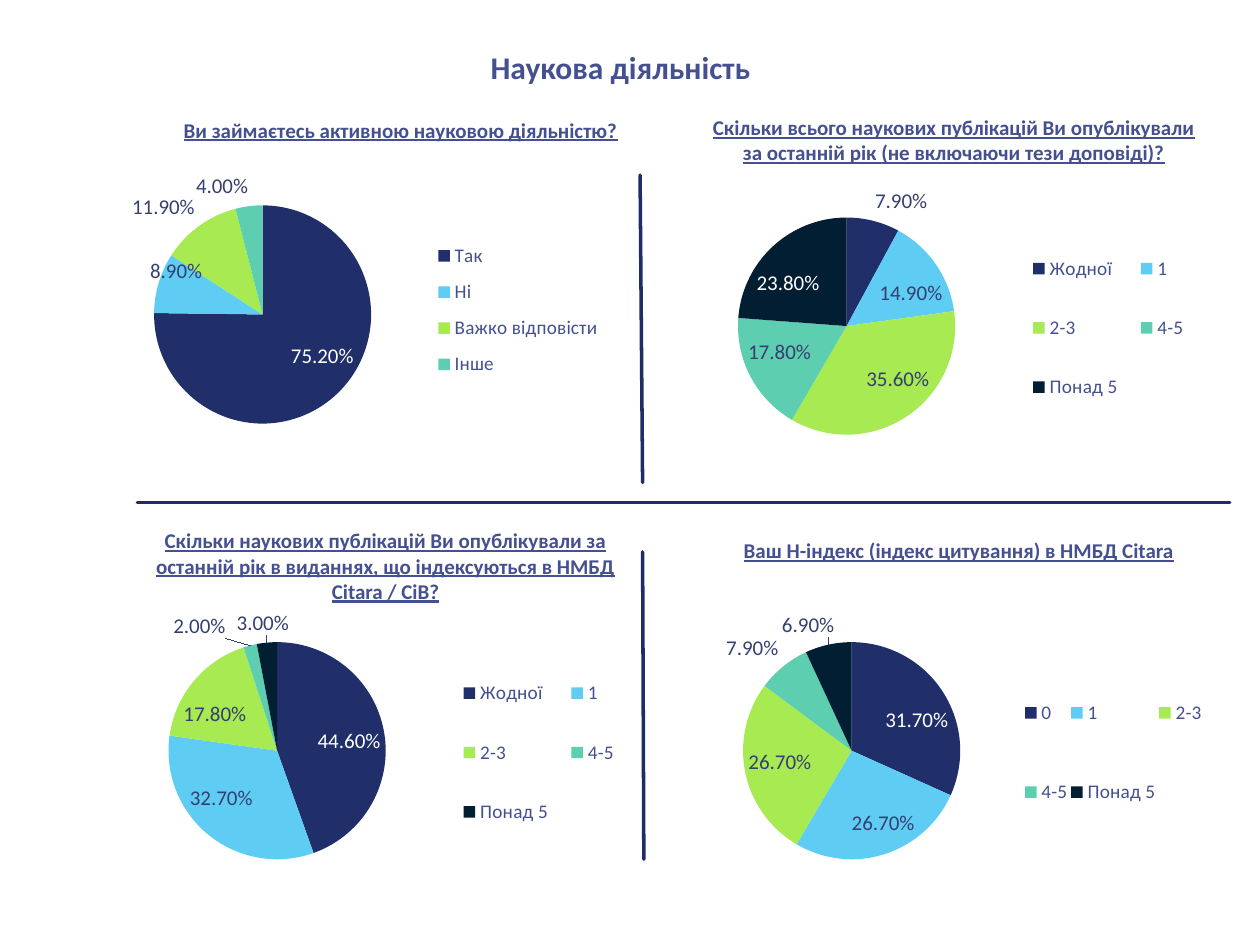
from lxml.etree import SubElement
from pptx import Presentation
from pptx.chart.data import CategoryChartData
from pptx.dml.color import RGBColor
from pptx.enum.chart import XL_CHART_TYPE as ChartType
from pptx.enum.chart import XL_LABEL_POSITION as LabelPosition
from pptx.enum.chart import XL_LEGEND_POSITION as LegendPosition
from pptx.enum.shapes import MSO_CONNECTOR as Connector
from pptx.enum.text import MSO_ANCHOR as Anchor
from pptx.enum.text import MSO_AUTO_SIZE as AutoSize
from pptx.enum.text import PP_ALIGN as Align
from pptx.oxml.ns import qn
from pptx.util import Inches, Pt

FONT = "Calibri"
COLORS = {"heading": "44508F", "line": "1F2D65", "label": "353F70",
          "chart": "101322", "white": "FFFFFF"}
SLICES = ["202F6A", "5ECCF3", "A7EA52", "5DCEAF", "021E32"]
PLOT_AREA = (0.09, 0.13, 0.39, 0.75)
WIDE_LEGEND = (0.59, 0.21, 0.33, 0.6)
COUNTS = ["1", "2-3", "4-5", "Понад 5"]

PANELS = [
    {"question": "Ви займаєтесь активною науковою діяльністю?",
     "heading_box": (1.09, 0.88, 4.18, 0.3), "chart_box": (0.79, 1.33, 4.48, 2.31),
     "categories": ["Так", "Ні", "Важко відповісти", "Інше"],
     "values": [0.752, 0.089, 0.119, 0.04], "white_label": 0,
     "legend": (0.56, 0.22, 0.36, 0.54), "shifts": {1: (0.09, 0.01)}},
    {"question": "Скільки всього наукових публікацій Ви опублікували за останній рік "
                 "(не включаючи тези доповіді)?",
     "heading_box": (5.55, 0.86, 4.04, 0.5), "chart_box": (5.46, 1.16, 4.42, 2.83),
     "categories": ["Жодної"] + COUNTS,
     "values": [0.079, 0.149, 0.356, 0.178, 0.238], "white_label": 4},
    {"question": "Скільки наукових публікацій Ви опублікували за останній рік "
                 "в виданнях, що індексуються в НМБД Citara / CiB?",
     "heading_box": (1.04, 4.14, 4.04, 0.71), "chart_box": (0.94, 4.53, 4.42, 2.83),
     "categories": ["Жодної"] + COUNTS,
     "values": [0.446, 0.327, 0.178, 0.02, 0.03], "white_label": 0},
    {"question": "Ваш H-індекс (індекс цитування) в НМБД Citara",
     "heading_box": (5.59, 4.22, 4.04, 0.3), "chart_box": (5.5, 4.53, 4.42, 2.83),
     "categories": ["0"] + COUNTS,
     "values": [0.317, 0.267, 0.267, 0.079, 0.069], "white_label": 0},
]
DIVIDERS = [(5.1, 3.83, 5.08, 1.39), (1.09, 3.99, 9.76, 3.99), (5.11, 6.82, 5.1, 4.38)]


def format_font(font, size, color, bold=None, underline=None):
    """Apply the deck font with a size, a colour and optional emphasis."""
    font.name, font.size = FONT, Pt(size)
    font.bold, font.underline = bold, underline
    font.color.rgb = RGBColor.from_string(color)


def write_text(shape, text, size, underline=None):
    """Write one centred bold heading into a shape."""
    frame = shape.text_frame
    frame.word_wrap = True
    frame.auto_size = AutoSize.NONE
    frame.vertical_anchor = Anchor.TOP
    para = frame.paragraphs[0]
    para.alignment = Align.CENTER
    span = para.add_run()
    span.text = text
    format_font(span.font, size, COLORS["heading"], bold=True, underline=underline)


def make_layout(parent, numbers, target=None):
    """Give a chart part a manual layout as fractions of the chart."""
    layout = SubElement(parent, qn("c:layout"))
    manual = SubElement(layout, qn("c:manualLayout"))
    settings = [("layoutTarget", target)] if target else []
    if len(numbers) == 4:
        settings += [("xMode", "edge"), ("yMode", "edge")]
    settings += list(zip("xywh", numbers))
    for name, value in settings:
        SubElement(manual, qn(f"c:{name}")).set("val", str(value))
    return layout


def place_layout(parent, index, numbers, target=None):
    """Replace any layout of a chart part by a manual one at a child index."""
    for old in parent.findall(qn("c:layout")):
        parent.remove(old)
    parent.insert(index, make_layout(parent, numbers, target))


def format_labels(series, white_label, shifts):
    """Format the percentage labels and the points that differ."""
    labels = series.data_labels
    labels.show_value = True
    labels.number_format, labels.number_format_is_linked = "0.00%", False
    labels.position = LabelPosition.BEST_FIT
    format_font(labels.font, 12, COLORS["label"])
    for index in sorted({white_label, *shifts}):
        label = series.points[index].data_label
        color = "white" if index == white_label else "label"
        format_font(label.font, 12, COLORS[color])
        label.position = LabelPosition.BEST_FIT
        if index in shifts:
            element = labels._element.findall(qn("c:dLbl"))[-1]
            place_layout(element, 1, shifts[index])


def add_pie(page, box, categories, values, white_label, legend=WIDE_LEGEND, shifts=None):
    """Add one pie chart with its legend inside the given box."""
    data = CategoryChartData(number_format="0.00%")
    data.categories = categories
    data.add_series("Series 1", values)
    chart = page.shapes.add_chart(ChartType.PIE, *map(Inches, box), data).chart
    format_font(chart.font, 18, COLORS["chart"])
    chart.has_title = False
    chart.has_legend = True
    chart.legend.position = LegendPosition.RIGHT
    chart.legend.include_in_layout = False
    format_font(chart.legend.font, 11, COLORS["heading"])
    place_layout(chart.legend._element, 1, legend)
    place_layout(chart._chartSpace.chart.plotArea, 0, PLOT_AREA, "inner")
    series = chart.plots[0].series[0]
    for index, color in zip(range(len(values)), SLICES):
        fill = series.points[index].format.fill
        fill.solid()
        fill.fore_color.rgb = RGBColor.from_string(color)
    format_labels(series, white_label, shifts or {})


def add_panel(page, question, heading_box, chart_box, **pie):
    """Add one survey question with its pie chart."""
    heading = page.shapes.add_textbox(*map(Inches, heading_box))
    write_text(heading, question, 12, underline=True)
    add_pie(page, chart_box, **pie)


def add_divider(page, ends):
    """Draw one round-ended line between the quarters."""
    divider = page.shapes.add_connector(Connector.STRAIGHT, *map(Inches, ends))
    divider.line.width = Pt(2)
    divider.line.color.rgb = RGBColor.from_string(COLORS["line"])
    divider.line._get_or_add_ln().set("cap", "rnd")
    SubElement(divider._element.spPr, qn("a:effectLst"))


def add_title(page, box):
    """Place and format the slide title."""
    title = page.shapes.title
    title.left, title.top, title.width, title.height = map(Inches, box)
    write_text(title, "Наукова діяльність", 18)


def main():
    """Build the survey slide and save it."""
    deck = Presentation()
    deck.slide_width, deck.slide_height = Inches(10), Inches(7.5)
    page = deck.slides.add_slide(deck.slide_layouts[5])
    add_title(page, (2.09, 0.33, 5.67, 0.4))
    for panel in PANELS:
        add_panel(page, **panel)
    for ends in DIVIDERS:
        add_divider(page, ends)
    deck.save("out.pptx")


if __name__ == "__main__":
    main()
